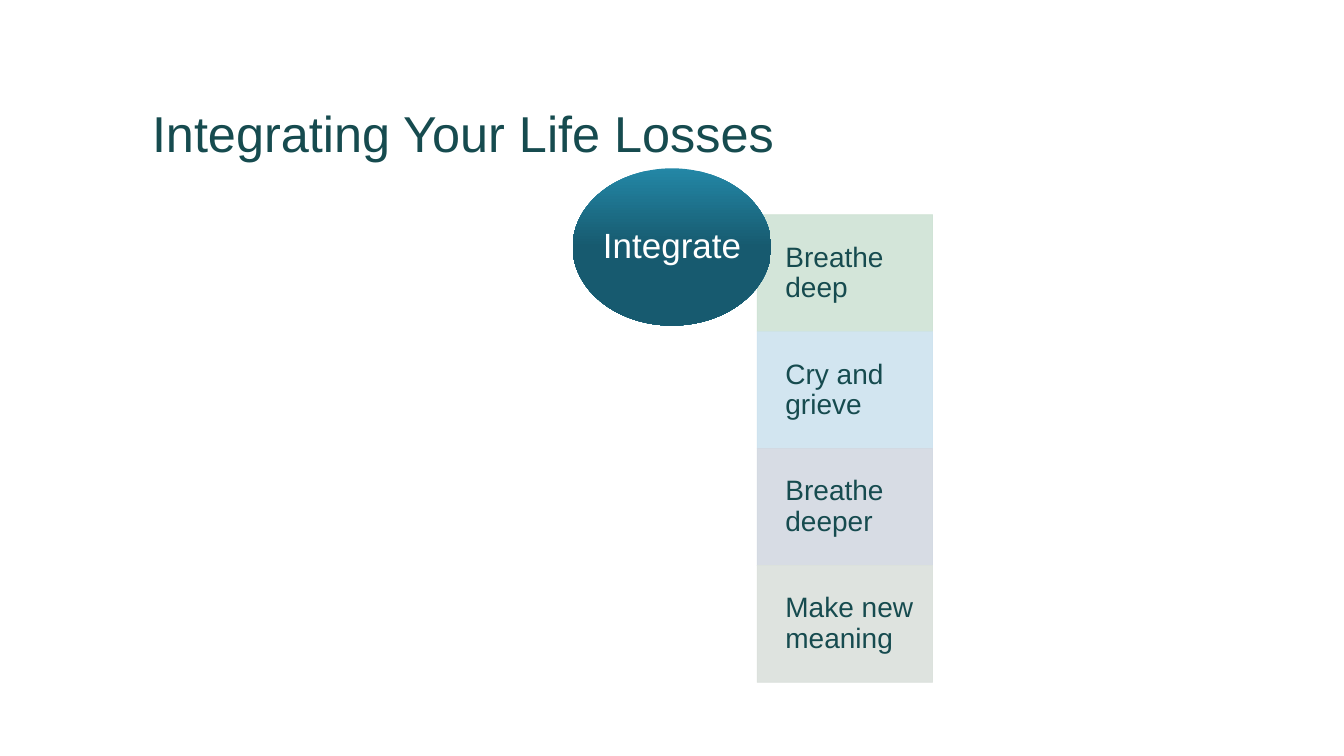
from lxml import etree
from pptx import Presentation
from pptx.dml.color import RGBColor
from pptx.enum.shapes import MSO_SHAPE
from pptx.enum.text import MSO_ANCHOR, PP_ALIGN
from pptx.oxml.ns import qn
from pptx.util import Inches, Pt

RECT, OVAL = MSO_SHAPE.RECTANGLE, MSO_SHAPE.OVAL
MIDDLE, BOTTOM = MSO_ANCHOR.MIDDLE, MSO_ANCHOR.BOTTOM
LEFT, CENTER = PP_ALIGN.LEFT, PP_ALIGN.CENTER

FONT = "Arial"
COLORS = {
    "ink": "164B4F",
    "white": "FFFFFF",
    "green": "CFE3D5",
    "blue": "CEE3EF",
    "lilac": "D3D9E2",
    "grey": "DBE1DC",
    "oval_top": "2387A6",
    "oval_base": "175A6F",
}
STEPS = [
    ("Breathe deep", "green"),
    ("Cry and grieve", "blue"),
    ("Breathe deeper", "lilac"),
    ("Make new meaning", "grey"),
]


def rgb(name):
    return RGBColor.from_string(COLORS[name])


def write(sp, text, size, color, anchor, align, insets):
    tf = sp.text_frame
    tf.word_wrap = True
    tf.vertical_anchor = anchor
    tf.margin_left, tf.margin_top, tf.margin_right, tf.margin_bottom = map(Inches, insets)
    p = tf.paragraphs[0]
    p.alignment = align
    p.line_spacing = 0.9
    r = p.add_run()
    r.text = text
    r.font.name = FONT
    r.font.size = Pt(size)
    r.font.color.rgb = rgb(color)


def add_title(s, x, y, w, h):
    sp = s.shapes.add_textbox(Inches(x), Inches(y), Inches(w), Inches(h))
    write(sp, "Integrating Your Life Losses", 36, "ink", BOTTOM, LEFT,
          (0.1, 0.05, 0.1, 0.05))


def add_steps(s, x, y, w, h):
    step_h = h / len(STEPS)
    for i, (text, color) in enumerate(STEPS):
        sp = s.shapes.add_shape(RECT, Inches(x), Inches(y + i * step_h),
                                Inches(w), Inches(step_h))
        sp.shadow.inherit = False
        sp.fill.solid()
        sp.fill.fore_color.rgb = rgb(color)
        sp.line.color.rgb = rgb(color)
        sp.line.width = Pt(0.5)
        for clr in sp._element.spPr.iter(qn("a:srgbClr")):
            etree.SubElement(clr, qn("a:alpha"), val="90000")
        write(sp, text, 20, "ink", MIDDLE, LEFT, (0.28, 0.16, 0.16, 0.16))


def add_oval(s, x, y, w, h):
    sp = s.shapes.add_shape(OVAL, Inches(x), Inches(y), Inches(w), Inches(h))
    sp.shadow.inherit = False
    sp.line.fill.background()
    sp.fill.gradient()
    sp.fill.gradient_angle = 270
    stops = zip(sp.fill.gradient_stops, (("oval_top", 0), ("oval_base", 0.5)))
    for stop, (color, position) in stops:
        stop.color.rgb = rgb(color)
        stop.position = position
    write(sp, "Integrate", 25, "white", MIDDLE, CENTER, (0, 0, 0, 0))


def main():
    prs = Presentation()
    prs.slide_width, prs.slide_height = Inches(13.33), Inches(7.5)
    s = prs.slides.add_slide(prs.slide_layouts[6])
    add_title(s, 1.41, 0.42, 10.5, 1.25)
    add_steps(s, 7.51, 2.13, 1.74, 4.64)
    add_oval(s, 5.68, 1.67, 1.97, 1.56)
    prs.save("out.pptx")


if __name__ == "__main__":
    main()
